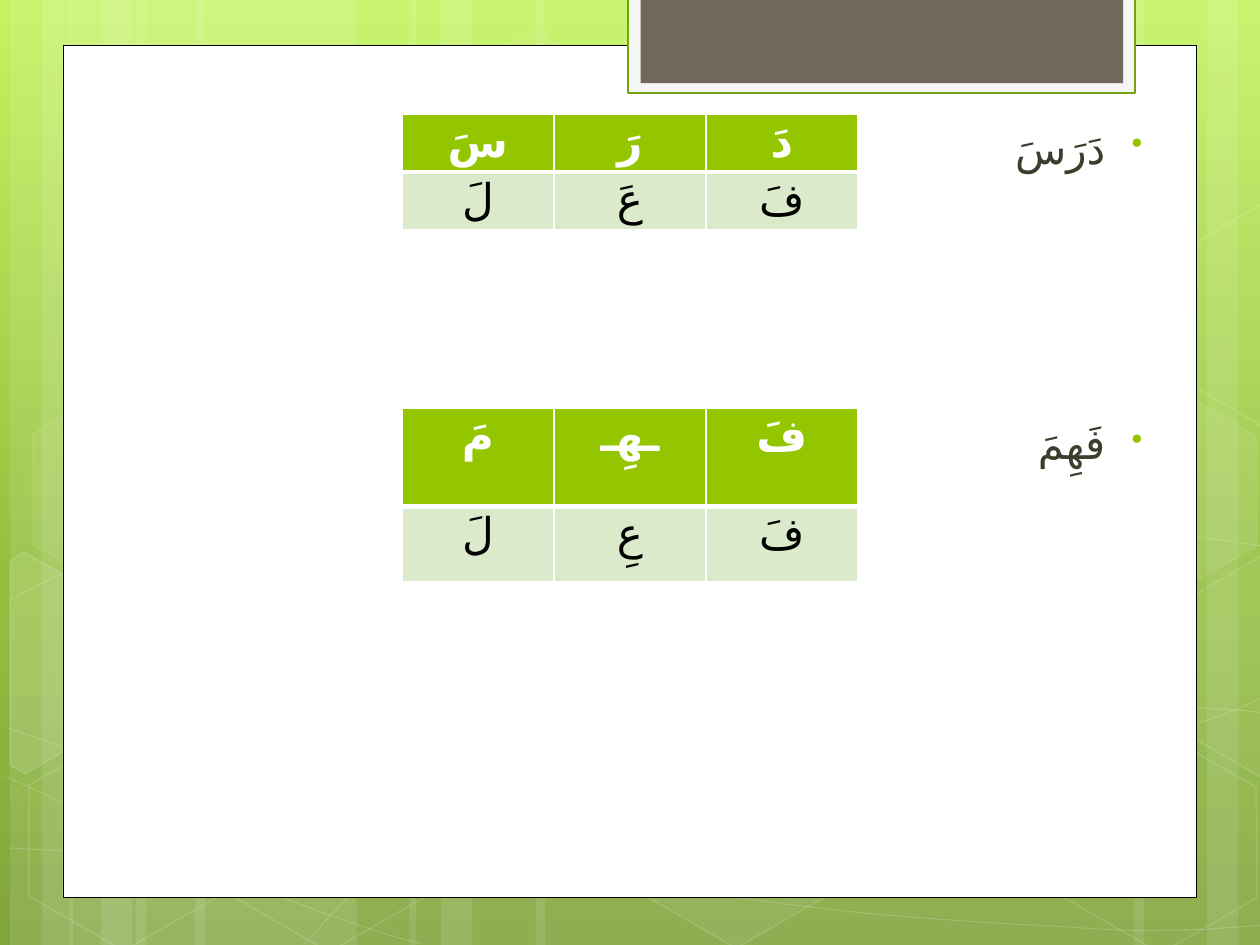
from copy import deepcopy
from math import cos, radians, sin
from typing import NamedTuple, Optional

from lxml.etree import SubElement
from pptx import Presentation
from pptx.dml.color import RGBColor
from pptx.enum.shapes import MSO_SHAPE
from pptx.enum.text import MSO_ANCHOR, PP_ALIGN
from pptx.oxml.ns import qn
from pptx.util import Emu, Inches, Pt

COLUMNS, ROWS = 100, 75  # grid of the slide
CELL = Inches(0.1)
FONT, ARABIC_FONT = "TeX Gyre Adventor", "DejaVu Sans"
WHITE, GREEN, PALE_GREEN = "FFFFFF", "94C600", "DCEACC"
TILT = 30  # degrees, of every hexagon


class Frame(NamedTuple):
    left: float
    top: float
    width: float
    height: float


class Paint(NamedTuple):
    color: str
    alpha: int = 100


class Stroke(NamedTuple):
    color: str
    width: float
    alpha: int = 100


class Hexagon(NamedTuple):
    left: float
    top: float
    fill_alpha: int
    line_alpha: int


class CutHexagon(NamedTuple):
    """A hexagon cut off by the slide's edge, with the centre it turns about."""
    center: tuple
    points: list
    fill_alpha: int


class Pattern(NamedTuple):
    """A word and the table that sets its letters against the verb pattern."""
    word: str
    space_before: float
    top: float
    row_heights: tuple
    letters: tuple
    measure: tuple


STRIPES = [(10.8, 17.5), (0.8, 5), (3.3, 8.3), (15.5, 17.5), (5.5, 5), (8, 8.3),
           (73.3, 17.5), (95.8, 5), (90, 8.3), (42.5, 30.8), (32.5, 5), (35, 8.3)]

# Each curve: a start point, then two control points and an end point per piece.
CURVES = [
    [(0.7, 67.3), (6.1, 67.6), (11.5, 67.9), (19, 67.8), (26.5, 67.7), (35.8, 67.5), (45.8, 66.5),
     (55.8, 65.5), (70, 63.6), (79.2, 61.7), (88.3, 59.8), (97.7, 56.8), (100.7, 55.1)],
    [(0.7, 47.7), (3.6, 46.1), (6.5, 44.6), (12.1, 43.1), (17.8, 41.6), (25.9, 39.4), (34.7, 38.7),
     (43.6, 38), (54.4, 37.9), (65.4, 38.7), (76.4, 39.5), (94.7, 42.6), (100.7, 43.4)],
    [(0.6, 61.7), (12.7, 67.2), (24.7, 72.7), (33.4, 74.9)],
    [(0.7, 57.8), (3.8, 58.9), (7, 60), (12.8, 61.6), (18.6, 63.1), (27.3, 65.6), (35.7, 67.3),
     (44, 69), (54.5, 70.8), (62.8, 71.8), (71.1, 72.9), (80, 73.3), (85.3, 73.6),
     (90.5, 74), (91.9, 73.8), (94.5, 73.8), (97.1, 73.7), (98.9, 73.5), (100.7, 73.4)],
    [(24.2, 74.9), (26, 72.9), (27.8, 70.9), (30.2, 69.1), (32.6, 67.3), (36, 65.3), (38.8, 63.9),
     (41.6, 62.5), (43.3, 61.9), (47, 60.9), (50.6, 59.9), (57.3, 58.5), (60.8, 57.8),
     (64.4, 57.1), (64.9, 57.1), (68, 56.9), (71.1, 56.6), (76, 56.3), (79.4, 56.2),
     (82.9, 56.1), (88.6, 56.2), (88.6, 56.2), (90.8, 56.2), (93, 56.2), (95.3, 56.2),
     (97.1, 56.3), (98.8, 56.4), (99.7, 56.5), (100.6, 56.6), (100.3, 56.5), (100.6, 56.6)],
]

HEXAGONS = [
    Hexagon(33.4, 3.6, 4, 8), Hexagon(49.7, 58.9, 6, 12), Hexagon(1.1, 59.1, 0, 12),
    Hexagon(1.4, 31.2, 7, 8), Hexagon(17.4, 59.2, 0, 12), Hexagon(75.3, 45.3, 10, 12),
    Hexagon(83.4, 59.3, 0, 12), Hexagon(83.4, 31.4, 7, 8),
]

RIGHT_EDGE = [(92.6, 48.5), (100.1, 44.1), (100.9, 44.6), (100.9, 61.3), (100.2, 61.7), (92.6, 57.3)]
CUT_HEXAGONS = [
    CutHexagon((3.6, 53.5), [(0.8, 44.5), (1.9, 43.8), (9.6, 48.2), (9.5, 57), (2, 61.4), (0.8, 60.7)], 10),
    CutHexagon((98.5, 52), RIGHT_EDGE, 4),
    CutHexagon((98.5, 24.1), [(x, y - 27.9) for x, y in RIGHT_EDGE], 0),
]

PATTERNS = [
    Pattern("دَرَسَ", 0, 9.1, (4.45, 4.45), ("سَ", "رَ", "دَ"), ("لَ", "عَ", "فَ")),
    Pattern("فَهِمَ", 140, 32.4, (7.8, 5.95), ("مَ", "ـهِـ", "فَ"), ("لَ", "عِ", "فَ")),
]


def rgb(color: str) -> RGBColor:
    return RGBColor.from_string(color)


def grid(units: float) -> Emu:
    return Emu(round(units * CELL))


def fade(parent, alpha: int) -> None:
    if alpha < 100:
        color = parent.find(".//" + qn("a:srgbClr"))
        SubElement(color, qn("a:alpha"), val=str(alpha * 1000))


def dress(shape, fill: Optional[Paint] = None, stroke: Optional[Stroke] = None) -> None:
    shape.shadow.inherit = False
    properties = shape._element.spPr
    if fill and fill.alpha:
        shape.fill.solid()
        shape.fill.fore_color.rgb = rgb(fill.color)
        fade(properties.find(qn("a:solidFill")), fill.alpha)
    else:
        shape.fill.background()
    if stroke:
        shape.line.color.rgb = rgb(stroke.color)
        shape.line.width = Pt(stroke.width)
        fade(properties.find(qn("a:ln")), stroke.alpha)
    else:
        shape.line.fill.background()


def add_preset(page, kind, frame: Frame, fill=None, stroke=None):
    shape = page.shapes.add_shape(kind, *map(grid, frame))
    dress(shape, fill, stroke)
    return shape


def add_outline(page, points: list, close: bool, fill=None, stroke=None):
    start, *others = [(grid(x), grid(y)) for x, y in points]
    builder = page.shapes.build_freeform(*start)
    builder.add_line_segments(others, close=close)
    shape = builder.convert_to_shape()
    dress(shape, fill, stroke)
    return shape


def bend(shape) -> None:
    """Turn every three straight segments into one cubic Bezier piece."""
    segments = list(shape._element.iter(qn("a:lnTo")))
    for first in range(0, len(segments), 3):
        curve = SubElement(segments[first].getparent(), qn("a:cubicBezTo"))
        for segment in segments[first:first + 3]:
            curve.append(segment[0])
            segment.getparent().remove(segment)


def turn_back(points: list, center: tuple) -> list:
    c, s = cos(radians(TILT)), sin(radians(TILT))
    offsets = [(x - center[0], y - center[1]) for x, y in points]
    return [(center[0] + c * x + s * y, center[1] - s * x + c * y) for x, y in offsets]


def write(paragraph, text: str, align, color: str, **formats) -> None:
    """Add one right-to-left span of text."""
    paragraph.alignment = align
    paragraph._p.get_or_add_pPr().set("rtl", "1")
    span = paragraph.add_run()
    span.text = text
    for name, value in {"name": FONT, **formats}.items():
        setattr(span.font, name, value)
    span.font.color.rgb = rgb(color)
    SubElement(span._r.get_or_add_rPr(), qn("a:cs"), typeface=ARABIC_FONT)


def add_words(page) -> None:
    box = page.shapes.add_textbox(*map(grid, Frame(11.4, 9.2, 81.1, 54.6)))
    box.text_frame.word_wrap = True
    for number, pattern in enumerate(PATTERNS):
        paragraph = box.text_frame.add_paragraph() if number else box.text_frame.paragraphs[0]
        properties = paragraph._p.get_or_add_pPr()
        properties.set("marL", str(Inches(0.38)))
        properties.set("indent", str(Inches(-0.3)))
        SubElement(SubElement(properties, qn("a:buClr")), qn("a:srgbClr"), val=GREEN)
        SubElement(properties, qn("a:buSzPct"), val="76000")
        SubElement(properties, qn("a:buChar"), char="•")
        paragraph.space_before = Pt(pattern.space_before)
        write(paragraph, pattern.word, PP_ALIGN.RIGHT, "3E3D2D", size=Pt(24))


def set_borders(cell, widths: dict) -> None:
    properties = cell._tc.get_or_add_tcPr()
    for place, (side, width) in enumerate(widths.items()):
        line = properties.makeelement(qn(f"a:ln{side}"), {"w": str(Pt(width))})
        SubElement(SubElement(line, qn("a:solidFill")), qn("a:srgbClr"), val=WHITE)
        properties.insert(place, line)


def add_letters(page, pattern: Pattern) -> None:
    frame = Frame(31.9, pattern.top, 36.2, sum(pattern.row_heights))
    table = page.shapes.add_table(2, 3, *map(grid, frame)).table
    table.horz_banding = False
    styles = [(pattern.letters, GREEN, WHITE, True, {"L": 1, "R": 1, "T": 1, "B": 3}),
              (pattern.measure, PALE_GREEN, "000000", False, {"L": 1, "R": 1, "T": 3, "B": 1})]
    for row, (texts, fill, color, bold, borders) in enumerate(styles):
        table.rows[row].height = grid(pattern.row_heights[row])
        for column, text in enumerate(texts):
            cell = table.cell(row, column)
            cell.fill.solid()
            cell.fill.fore_color.rgb = rgb(fill)
            cell.margin_top = cell.margin_bottom = Inches(0.02)
            cell.vertical_anchor = MSO_ANCHOR.TOP
            set_borders(cell, borders)
            write(cell.text_frame.paragraphs[0], text, PP_ALIGN.CENTER, color, size=Pt(25), bold=bold)


def set_background(page) -> None:
    fill = page.background.fill
    fill.gradient()
    fill.gradient_angle = 270
    stops = page._element.find(".//" + qn("a:gsLst"))
    stops.append(deepcopy(stops[-1]))
    colors = [(0, "C3F35F"), (0.62, "93BF3F"), (1, "81A53E")]
    for stop, (position, color) in zip(fill.gradient_stops, colors):
        stop.position = position
        stop.color.rgb = rgb(color)


def add_scenery(page) -> None:
    for left, width in STRIPES:
        add_preset(page, MSO_SHAPE.RECTANGLE, Frame(left, 0, width, ROWS), Paint(WHITE, 10))
    for knots in CURVES:
        bend(add_outline(page, knots, False, stroke=Stroke(WHITE, 0.5, 20)))
    for left, top, fill_alpha, line_alpha in HEXAGONS:
        shape = add_preset(page, MSO_SHAPE.HEXAGON, Frame(left, top, 17.5, 15.2),
                           Paint(WHITE, fill_alpha), Stroke(WHITE, 1, line_alpha))
        shape.rotation = TILT
        shape.adjustments[0] = 0.29
    for center, points, fill_alpha in CUT_HEXAGONS:
        shape = add_outline(page, turn_back(points, center), True,
                            Paint(WHITE, fill_alpha), Stroke(WHITE, 1, 12))
        shape.rotation = TILT
    for frame, color, stroke in [
        (Frame(5, 3.6, 90, 67.65), WHITE, Stroke("000000", 0.5)),
        (Frame(49.85, -0.2, 40.25, 7.6), "F5F5F5", Stroke("74A510", 1.25)),
        (Frame(50.85, -0.2, 38.3, 6.8), "71685A", None),
    ]:
        add_preset(page, MSO_SHAPE.RECTANGLE, frame, Paint(color), stroke)


def main() -> None:
    deck = Presentation()
    deck.slide_width, deck.slide_height = grid(COLUMNS), grid(ROWS)
    page = deck.slides.add_slide(deck.slide_layouts[6])
    set_background(page)
    add_scenery(page)
    add_words(page)
    for pattern in PATTERNS:
        add_letters(page, pattern)
    deck.save("out.pptx")


if __name__ == "__main__":
    main()
